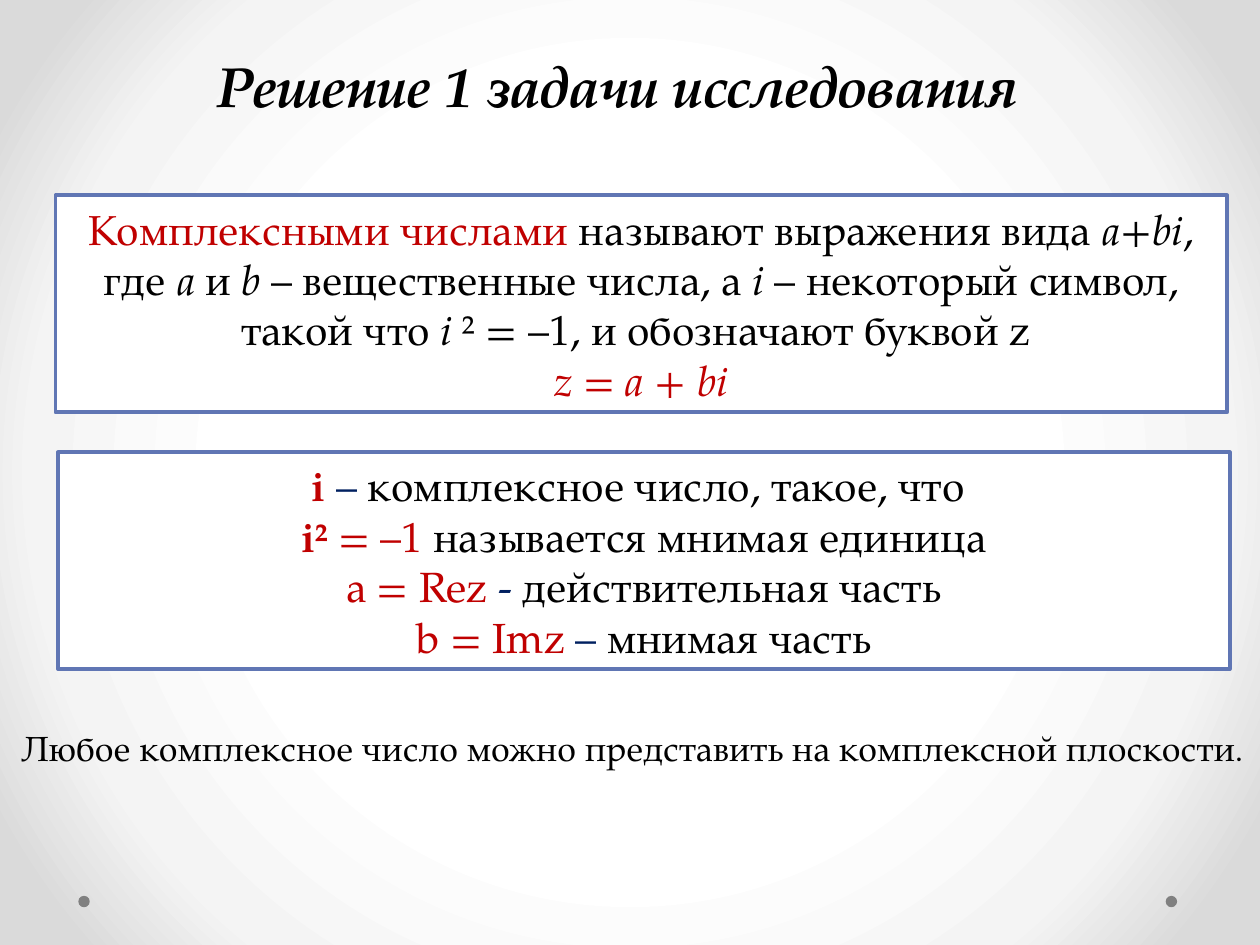
from typing import NamedTuple

from lxml import etree
from pptx import Presentation
from pptx import util as u
from pptx.dml.color import RGBColor
from pptx.enum import shapes, text
from pptx.oxml import ns

FONT = "TeX Gyre Pagella"
BLACK, RED, NAVY = "000000", "C00000", "002060"
WHITE, BORDER, GREY = "FFFFFF", "6076B4", "808080"
BACKDROP_STOPS = [(50, WHITE), (76, "F4F4F4"), (92, "DADADA")]


class Run(NamedTuple):
    text: str
    color: str = BLACK
    bold: bool = False
    italic: bool = False
    size: float = 24


class Panel(NamedTuple):
    left: float
    top: float
    paragraphs: list[list[Run]]


def rgb(value: str) -> RGBColor:
    return RGBColor.from_string(value)


def write(frame, paragraphs: list[list[Run]], *, align=text.PP_ALIGN.LEFT, wrap=True) -> None:
    frame.word_wrap = wrap
    frame.auto_size = text.MSO_AUTO_SIZE.SHAPE_TO_FIT_TEXT
    for index, runs in enumerate(paragraphs):
        paragraph = frame.add_paragraph() if index else frame.paragraphs[0]
        paragraph.alignment = align
        for item in runs:
            run = paragraph.add_run()
            run.text = item.text
            run.font.name = FONT
            run.font.size = u.Pt(item.size)
            run.font.bold = item.bold
            run.font.italic = item.italic
            run.font.color.rgb = rgb(item.color)


def add_filled(slide, preset, left: float, top: float, width: float, height: float, fill: str):
    shape = slide.shapes.add_shape(preset, u.Cm(left), u.Cm(top), u.Cm(width), u.Cm(height))
    shape.shadow.inherit = False
    shape.fill.solid()
    shape.fill.fore_color.rgb = rgb(fill)
    shape.line.fill.background()
    return shape


def add_panel(slide, panel: Panel) -> None:
    box = add_filled(slide, shapes.MSO_SHAPE.RECTANGLE, panel.left, panel.top, 23.62, 4.37, WHITE)
    box.line.color.rgb = rgb(BORDER)
    box.line.width = u.Pt(2.25)
    write(box.text_frame, panel.paragraphs, align=text.PP_ALIGN.CENTER)


def add_line(slide, left: float, top: float, width: float, height: float, runs: list[Run]) -> None:
    box = slide.shapes.add_textbox(u.Cm(left), u.Cm(top), u.Cm(width), u.Cm(height))
    write(box.text_frame, [runs], wrap=False)


def paint_backdrop(slide) -> None:
    fill = slide.background.fill
    fill.gradient()
    gradient = slide.background._cSld.find(".//" + ns.qn("a:gradFill"))
    for child in list(gradient):
        gradient.remove(child)
    stops = etree.SubElement(gradient, ns.qn("a:gsLst"))
    for position, color in BACKDROP_STOPS:
        stop = etree.SubElement(stops, ns.qn("a:gs"), pos=str(position * 1000))
        etree.SubElement(stop, ns.qn("a:srgbClr"), val=color)
    path = etree.SubElement(gradient, ns.qn("a:path"), {"path": "circle"})
    etree.SubElement(path, ns.qn("a:fillToRect"), {side: "50000" for side in "ltrb"})


DEFINITION = Panel(1.12, 3.94, [
    [
        Run("Комплексными числами ", RED),
        Run("называют выражения вида "),
        Run("а+bi", italic=True),
        Run(", где "),
        Run("а ", italic=True),
        Run("и "),
        Run("b", italic=True),
        Run(" – вещественные числа, а "),
        Run("i ", italic=True),
        Run("– некоторый символ, такой что "),
        Run("i", italic=True),
        Run(" ² = –1, и обозначают буквой z "),
    ],
    [Run("z = a + bi", RED, italic=True)],
])

PARTS = Panel(1.17, 9.12, [
    [Run("i", RED, bold=True), Run(" – ", NAVY), Run("комплексное число, такое, что ")],
    [Run("i²", RED, bold=True), Run(" = –1 ", RED), Run("называется мнимая единица")],
    [Run("а = Rez ", RED), Run("- ", NAVY), Run("действительная часть")],
    [Run("b = Imz ", RED), Run("– ", NAVY), Run("мнимая часть")],
])


def main() -> None:
    deck = Presentation()
    deck.slide_width, deck.slide_height = u.Cm(25.4), u.Cm(19.05)
    slide = deck.slides.add_slide(deck.slide_layouts[6])
    paint_backdrop(slide)
    for dot_left in (23.5, 1.58):
        add_filled(slide, shapes.MSO_SHAPE.OVAL, dot_left, 18.06, 0.23, 0.23, GREY)
    for panel in (DEFINITION, PARTS):
        add_panel(slide, panel)
    add_line(slide, 4.14, 0.91, 17.17, 1.62,
             [Run("Решение 1 задачи исследования", bold=True, italic=True, size=32)])
    add_line(slide, 0.18, 14.53, 25.55, 1.12, [
        Run("Любое комплексное число можно представить на комплексной плоскости", size=20),
        Run(".", size=18),
    ])
    deck.save("out.pptx")


if __name__ == "__main__":
    main()
